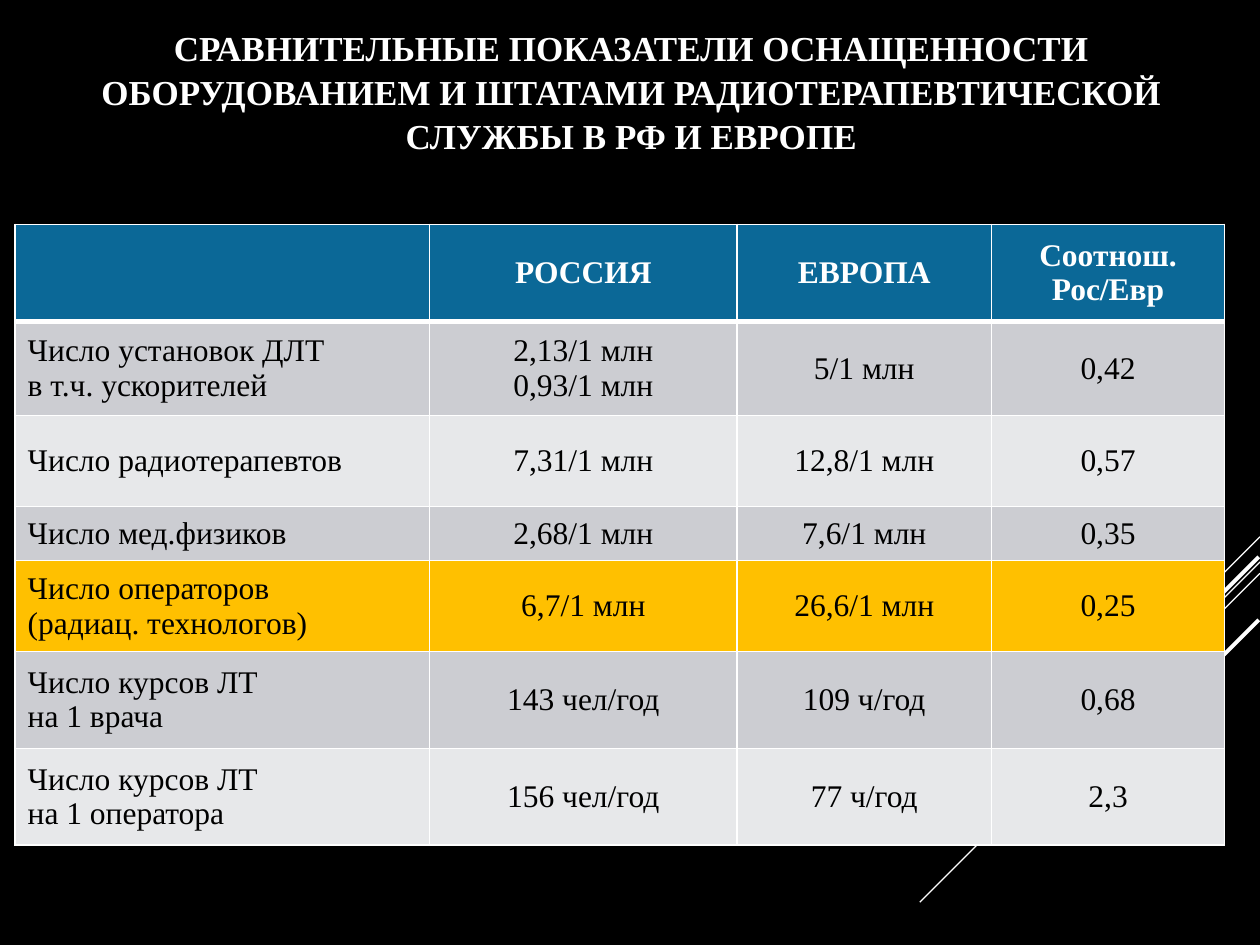
from dataclasses import dataclass

from lxml import etree
from pptx import Presentation
from pptx.dml.color import RGBColor
from pptx.enum import shapes, text
from pptx.oxml import ns
from pptx.util import Inches, Pt

COLORS = {
    "black": "000000",
    "white": "FFFFFF",
    "header": "0B6897",
    "dark": "CCCDD2",
    "light": "E7E8EA",
    "highlight": "FFC000",
}
FONT = "Times New Roman"
TITLE = ("СРАВНИТЕЛЬНЫЕ ПОКАЗАТЕЛИ ОСНАЩЕННОСТИ ОБОРУДОВАНИЕМ "
         "И ШТАТАМИ РАДИОТЕРАПЕВТИЧЕСКОЙ СЛУЖБЫ В РФ И ЕВРОПЕ")


@dataclass
class Ray:
    x: float
    y: float
    length: float
    width: float


@dataclass
class Row:
    height: float
    fill: str
    cells: tuple[str, str, str, str]


RAYS = [
    Ray(10, 4.26, 0.83, 0.75),
    Ray(10, 4.46, 2.7, 0.75),
    Ray(10, 4.55, 1.72, 0.75),
    Ray(9.99, 4.42, 1.57, 2.25),
    Ray(9.99, 4.92, 1.14, 2.25),
]
COLUMNS = [3.29, 2.44, 2.02, 1.85]
ROWS = [
    Row(0.77, "header", ("", "РОССИЯ", "ЕВРОПА", "Соотнош.\nРос/Евр")),
    Row(0.75, "dark", ("Число установок ДЛТ\nв т.ч. ускорителей",
                       "2,13/1 млн\n0,93/1 млн", "5/1 млн", "0,42")),
    Row(0.72, "light", ("Число радиотерапевтов", "7,31/1 млн", "12,8/1 млн", "0,57")),
    Row(0.43, "dark", ("Число мед.физиков", "2,68/1 млн", "7,6/1 млн", "0,35")),
    Row(0.72, "highlight", ("Число операторов\n(радиац. технологов)",
                            "6,7/1 млн", "26,6/1 млн", "0,25")),
    Row(0.77, "dark", ("Число курсов ЛТ\nна 1 врача", "143 чел/год", "109 ч/год", "0,68")),
    Row(0.77, "light", ("Число курсов ЛТ\nна 1 оператора", "156 чел/год", "77 ч/год", "2,3")),
]


def rgb(name: str) -> RGBColor:
    return RGBColor.from_string(COLORS[name])


def style_text(tf, size: float, color: str, bold: bool, align) -> None:
    for p in tf.paragraphs:
        p.alignment = align
        p.font.name = FONT
        p.font.size = Pt(size)
        p.font.bold = bold
        p.font.color.rgb = rgb(color)


def draw_ray(s, ray: Ray) -> None:
    sp = s.shapes.add_connector(
        shapes.MSO_CONNECTOR.STRAIGHT, Inches(ray.x), Inches(ray.y),
        Inches(ray.x - ray.length), Inches(ray.y + ray.length))
    sp.line.color.rgb = rgb("white")
    sp.line.width = Pt(ray.width)
    etree.SubElement(sp._element.spPr, ns.qn("a:effectLst"))


def draw_title(s) -> None:
    sp = s.shapes.add_textbox(Inches(0.51), Inches(0.13), Inches(9), Inches(1.18))
    tf = sp.text_frame
    tf.word_wrap = True
    tf.vertical_anchor = text.MSO_ANCHOR.MIDDLE
    tf.text = TITLE
    tf.paragraphs[0].line_spacing = 1.04
    style_text(tf, 20, "white", True, text.PP_ALIGN.CENTER)


def set_borders(cell, top: float, bottom: float) -> None:
    tc_pr = cell._tc.get_or_add_tcPr()
    widths = {"lnL": 1, "lnR": 1, "lnT": top, "lnB": bottom}
    for i, (tag, width) in enumerate(widths.items()):
        ln = etree.Element(ns.qn(f"a:{tag}"), w=str(Pt(width)))
        fill = etree.SubElement(ln, ns.qn("a:solidFill"))
        etree.SubElement(fill, ns.qn("a:srgbClr"), val=COLORS["white"])
        tc_pr.insert(i, ln)


def draw_table(s) -> None:
    table = s.shapes.add_table(
        len(ROWS), len(COLUMNS), Inches(0.12), Inches(1.78),
        Inches(sum(COLUMNS)), Inches(sum(row.height for row in ROWS))).table
    for column, width in zip(table.columns, COLUMNS):
        column.width = Inches(width)
    for i, row in enumerate(ROWS):
        table.rows[i].height = Inches(row.height)
        header = i == 0
        for j, value in enumerate(row.cells):
            cell = table.cell(i, j)
            cell.fill.solid()
            cell.fill.fore_color.rgb = rgb(row.fill)
            set_borders(cell, 3 if i == 1 else 1, 3 if header else 1)
            cell.vertical_anchor = text.MSO_ANCHOR.MIDDLE
            cell.text_frame.text = value
            align = text.PP_ALIGN.CENTER if j else text.PP_ALIGN.LEFT
            style_text(cell.text_frame, 18, "white" if header else "black", header, align)


def main() -> None:
    prs = Presentation()
    prs.slide_width, prs.slide_height = Inches(10), Inches(7.5)
    s = prs.slides.add_slide(prs.slide_layouts[6])
    s.background.fill.solid()
    s.background.fill.fore_color.rgb = rgb("black")
    for ray in RAYS:
        draw_ray(s, ray)
    draw_title(s)
    draw_table(s)
    prs.save("out.pptx")


if __name__ == "__main__":
    main()
